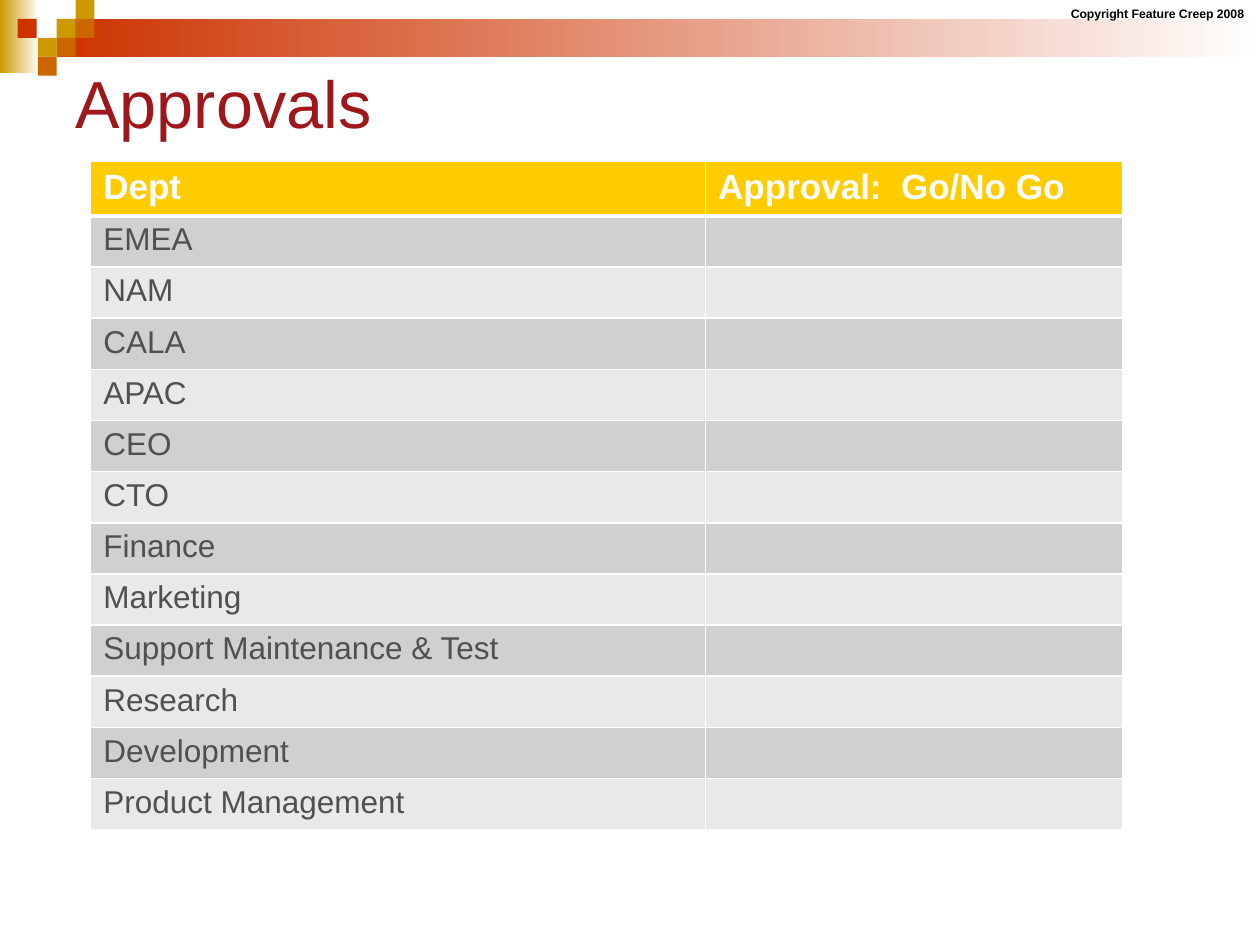
from lxml.etree import SubElement as Sub
from pptx import Presentation
from pptx.dml.color import RGBColor as Rgb
from pptx.enum.shapes import MSO_SHAPE as Shape
from pptx.enum.text import MSO_ANCHOR as Anchor, PP_ALIGN as Align
from pptx.oxml.ns import qn
from pptx.util import Inches, Pt

HUES = {
    "white": "FFFFFF", "black": "000000", "title": "9E171B",
    "gold": "CC9900", "orange": "CC6600", "red": "CC3300",
    "head": "FFCC00", "dark": "D0D0D0", "light": "E9E9E9", "body": "4F5050",
}
DEPTS = [
    "EMEA", "NAM", "CALA", "APAC", "CEO", "CTO", "Finance", "Marketing",
    "Support Maintenance & Test", "Research", "Development",
    "Product Management",
]
TILES = [
    (0.45, 0.15, "gold"), (0.6, 0, "gold"), (0.6, 0.15, "orange"),
    (0.3, 0.3, "gold"), (0.14, 0.15, "red"), (0.45, 0.3, "orange"),
    (0.3, 0.45, "orange"),
]


def hue(name):
    return Rgb.from_string(HUES[name])


def write(frame, text, size=18, color="body", bold=False):
    par = frame.paragraphs[0]
    par.alignment = Align.LEFT
    run = par.add_run()
    run.text = text
    font = run.font
    font.name, font.size, font.bold = "Arial", Pt(size), bold
    font.color.rgb = hue(color)


def add_rect(slide, left, top, width, height, color, fade=False):
    rect = slide.shapes.add_shape(
        Shape.RECTANGLE, Inches(left), Inches(top), Inches(width), Inches(height))
    rect.shadow.inherit = False
    rect.line.fill.background()
    if fade:
        rect.fill.gradient()
        rect.fill.gradient_angle = 0
        for stop, name in zip(rect.fill.gradient_stops, (color, "white")):
            stop.color.rgb = hue(name)
    else:
        rect.fill.solid()
        rect.fill.fore_color.rgb = hue(color)


def add_banner(slide, left, top, width):
    add_rect(slide, left, top, 0.31, 0.58, "gold", fade=True)
    add_rect(slide, left + 0.45, top + 0.15, width - 0.45, 0.3, "red", fade=True)
    for x, y, color in TILES:
        add_rect(slide, left + x, top + y, 0.15, 0.15, color)


def add_notice(slide, left, top, width, height):
    box = slide.shapes.add_textbox(
        Inches(left), Inches(top), Inches(width), Inches(height))
    box.text_frame.word_wrap = False
    write(box.text_frame, "Copyright Feature Creep 2008",
          size=7, color="black", bold=True)


def set_title(slide, left, top, width, height):
    title = slide.shapes.title
    title.left, title.top = Inches(left), Inches(top)
    title.width, title.height = Inches(width), Inches(height)
    title.text_frame.vertical_anchor = Anchor.MIDDLE
    write(title.text_frame, "Approvals", size=38, color="title")


def set_edges(cell, top, bottom):
    props = cell._tc.get_or_add_tcPr()
    for side, size in (("L", 1), ("R", 1), ("T", top), ("B", bottom)):
        line = Sub(props, qn(f"a:ln{side}"), w=str(Pt(size)))
        fill = Sub(line, qn("a:solidFill"))
        Sub(fill, qn("a:srgbClr"), val=HUES["white"])


def add_grid(slide, left, top, width, height):
    rows = [("Dept", "Approval:  Go/No Go")] + [(dept, "") for dept in DEPTS]
    grid = slide.shapes.add_table(
        len(rows), 2, Inches(left), Inches(top),
        Inches(width), Inches(height)).table
    first = 4.88
    grid.columns[0].width = Inches(first)
    grid.columns[1].width = Inches(width - first)
    for r, texts in enumerate(rows):
        head = r == 0
        shade = "head" if head else "dark" if r % 2 else "light"
        for c, text in enumerate(texts):
            cell = grid.cell(r, c)
            set_edges(cell, 3 if r == 1 else 1, 3 if head else 1)
            cell.fill.solid()
            cell.fill.fore_color.rgb = hue(shade)
            if head:
                write(cell.text_frame, text, size=20, color="white", bold=True)
            elif text:
                write(cell.text_frame, text)


def main():
    deck = Presentation()
    deck.slide_width, deck.slide_height = Inches(10), Inches(7.5)
    slide = deck.slides.add_slide(deck.slide_layouts[5])
    add_banner(slide, 0, 0, 10)
    add_notice(slide, 8.4, 0, 1.6, 0.22)
    set_title(slide, 0.5, 0.5, 9, 0.62)
    add_grid(slide, 0.72, 1.28, 8.19, 5.28)
    deck.save("out.pptx")


if __name__ == "__main__":
    main()
